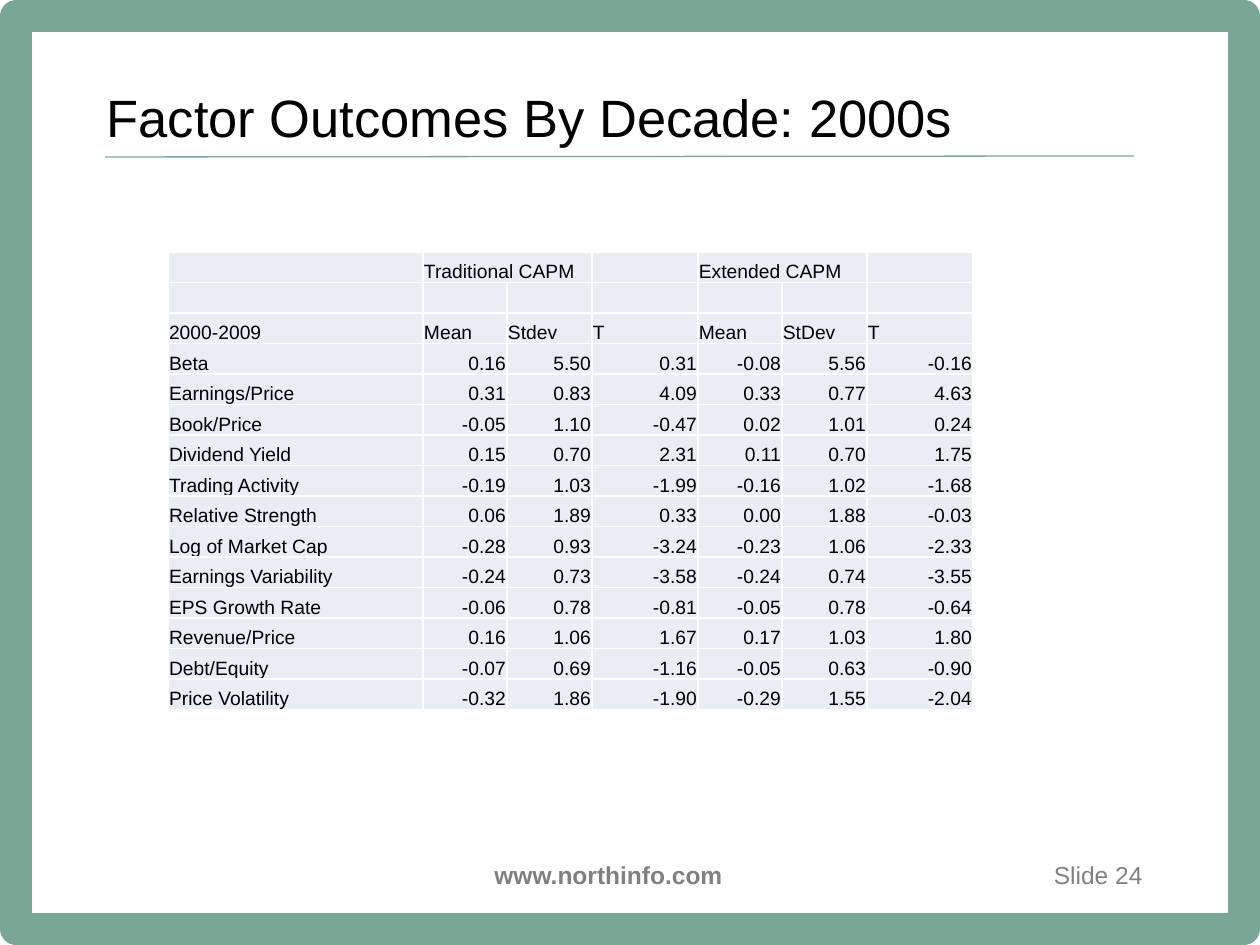
"""Build the slide on factor outcomes in the 2000s."""
from lxml.etree import SubElement
from pptx import Presentation
from pptx.dml.color import RGBColor
from pptx.enum.shapes import MSO_CONNECTOR, MSO_SHAPE
from pptx.enum.text import MSO_ANCHOR, MSO_AUTO_SIZE, PP_ALIGN
from pptx.oxml.ns import qn
from pptx.util import Pt

EMU_PER_PX = 914400 / 126
GREEN = RGBColor(0x7A, 0xA6, 0x96)
GRAY = RGBColor(0x80, 0x80, 0x80)
BLACK = RGBColor(0, 0, 0)
PALE_BLUE = RGBColor(0xE9, 0xED, 0xF4)
WHITE = RGBColor(0xFF, 0xFF, 0xFF)

COLUMN_WIDTHS = [255, 84, 85, 106, 84, 85, 106]
TABLE_HEIGHT = 458
HEADINGS = [
    ["", "Traditional CAPM", "", "", "Extended CAPM", "", ""],
    [""] * 7,
    ["2000-2009", "Mean", "Stdev", "T", "Mean", "StDev", "T"],
]
FACTORS = [
    ["Beta", "0.16", "5.50", "0.31", "-0.08", "5.56", "-0.16"],
    ["Earnings/Price", "0.31", "0.83", "4.09", "0.33", "0.77", "4.63"],
    ["Book/Price", "-0.05", "1.10", "-0.47", "0.02", "1.01", "0.24"],
    ["Dividend Yield", "0.15", "0.70", "2.31", "0.11", "0.70", "1.75"],
    ["Trading Activity", "-0.19", "1.03", "-1.99", "-0.16", "1.02", "-1.68"],
    ["Relative Strength", "0.06", "1.89", "0.33", "0.00", "1.88", "-0.03"],
    ["Log of Market Cap", "-0.28", "0.93", "-3.24", "-0.23", "1.06", "-2.33"],
    ["Earnings Variability", "-0.24", "0.73", "-3.58", "-0.24", "0.74", "-3.55"],
    ["EPS Growth Rate", "-0.06", "0.78", "-0.81", "-0.05", "0.78", "-0.64"],
    ["Revenue/Price", "0.16", "1.06", "1.67", "0.17", "1.03", "1.80"],
    ["Debt/Equity", "-0.07", "0.69", "-1.16", "-0.05", "0.63", "-0.90"],
    ["Price Volatility", "-0.32", "1.86", "-1.90", "-0.29", "1.55", "-2.04"],
]


def px(length):
    """Turn pixels into EMU."""
    return round(length * EMU_PER_PX)


def set_attributes(target, values):
    """Set each named attribute of the target."""
    for name, value in values.items():
        setattr(target, name, value)


def write(paragraph, wording, size, color, align=PP_ALIGN.LEFT, bold=False):
    """Write one formatted run into a paragraph."""
    paragraph.alignment = align
    run = paragraph.add_run()
    run.text = wording
    set_attributes(run.font, {"name": "Arial", "size": Pt(size), "bold": bold})
    run.font.color.rgb = color


def add_frame(slide):
    """Draw the thick green frame around the slide."""
    frame = slide.shapes.add_shape(
        MSO_SHAPE.RECTANGLE, px(16), px(16), px(1228), px(913))
    frame.shadow.inherit = False
    frame.fill.background()
    frame.line.color.rgb = GREEN
    frame.line.width = Pt(18)


def add_rule(slide):
    """Draw the thin rule under the title."""
    rule = slide.shapes.add_connector(
        MSO_CONNECTOR.STRAIGHT, px(105), px(157), px(1134), px(156))
    rule.line.color.rgb = GREEN
    rule.line.width = Pt(0.75)
    SubElement(rule._element.spPr, qn("a:effectLst"))


def add_title(slide, wording):
    """Place and fill the title placeholder."""
    title = slide.shapes.title
    set_attributes(title, {
        "left": px(94), "top": px(73), "width": px(1134), "height": px(87)})
    set_attributes(title.text_frame, {
        "auto_size": MSO_AUTO_SIZE.NONE, "word_wrap": True,
        "vertical_anchor": MSO_ANCHOR.MIDDLE})
    write(title.text_frame.paragraphs[0], wording, 30, BLACK)


def add_footer(slide, left, width, wording, align, bold=False):
    """Add one gray footer text."""
    footer = slide.shapes.add_textbox(px(left), px(854), px(width), px(42))
    set_attributes(footer.text_frame, {
        "word_wrap": True, "auto_size": MSO_AUTO_SIZE.SHAPE_TO_FIT_TEXT})
    write(footer.text_frame.paragraphs[0], wording, 14, GRAY, align, bold)


def add_borders(cell):
    """Give a cell white borders on all four sides."""
    properties = cell._tc.get_or_add_tcPr()
    for position, side in enumerate(("a:lnL", "a:lnR", "a:lnT", "a:lnB")):
        border = SubElement(properties, qn(side), w=str(Pt(1)))
        fill = SubElement(border, qn("a:solidFill"))
        SubElement(fill, qn("a:srgbClr"), val=str(WHITE))
        properties.insert(position, border)


def fill_cell(cell, wording, align):
    """Format a table cell and write its wording."""
    set_attributes(cell, {
        "margin_left": px(1), "margin_right": px(1), "margin_top": px(1),
        "margin_bottom": 0, "vertical_anchor": MSO_ANCHOR.BOTTOM})
    cell.fill.solid()
    cell.fill.fore_color.rgb = PALE_BLUE
    add_borders(cell)
    paragraph = cell.text_frame.paragraphs[0]
    if wording:
        write(paragraph, wording, 11, BLACK, align)
    else:
        SubElement(paragraph._p, qn("a:endParaRPr"), sz="1100")


def add_factor_table(slide):
    """Add the table of factor outcomes under both models."""
    rows = HEADINGS + FACTORS
    table = slide.shapes.add_table(
        len(rows), len(COLUMN_WIDTHS), px(168), px(252),
        px(sum(COLUMN_WIDTHS)), px(TABLE_HEIGHT)).table
    set_attributes(table, {"first_row": False, "horz_banding": False})
    for column, width in zip(table.columns, COLUMN_WIDTHS):
        column.width = px(width)
    for row_index, values in enumerate(rows):
        table.rows[row_index].height = px(TABLE_HEIGHT) // len(rows)
        for column_index, wording in enumerate(values):
            is_number = row_index >= len(HEADINGS) and column_index > 0
            fill_cell(table.cell(row_index, column_index), wording,
                      PP_ALIGN.RIGHT if is_number else PP_ALIGN.LEFT)
    for first in (1, 4):
        table.cell(0, first).merge(table.cell(0, first + 1))


def main():
    """Build and save the slide."""
    presentation = Presentation()
    set_attributes(presentation, {
        "slide_width": px(1260), "slide_height": px(945)})
    slide = presentation.slides.add_slide(presentation.slide_layouts[5])
    add_frame(slide)
    add_footer(slide, 447, 323, "www.northinfo.com", PP_ALIGN.CENTER, True)
    add_footer(slide, 998, 157, "Slide 24", PP_ALIGN.RIGHT)
    add_rule(slide)
    add_title(slide, "Factor Outcomes By Decade: 2000s")
    add_factor_table(slide)
    presentation.save("out.pptx")


if __name__ == "__main__":
    main()
